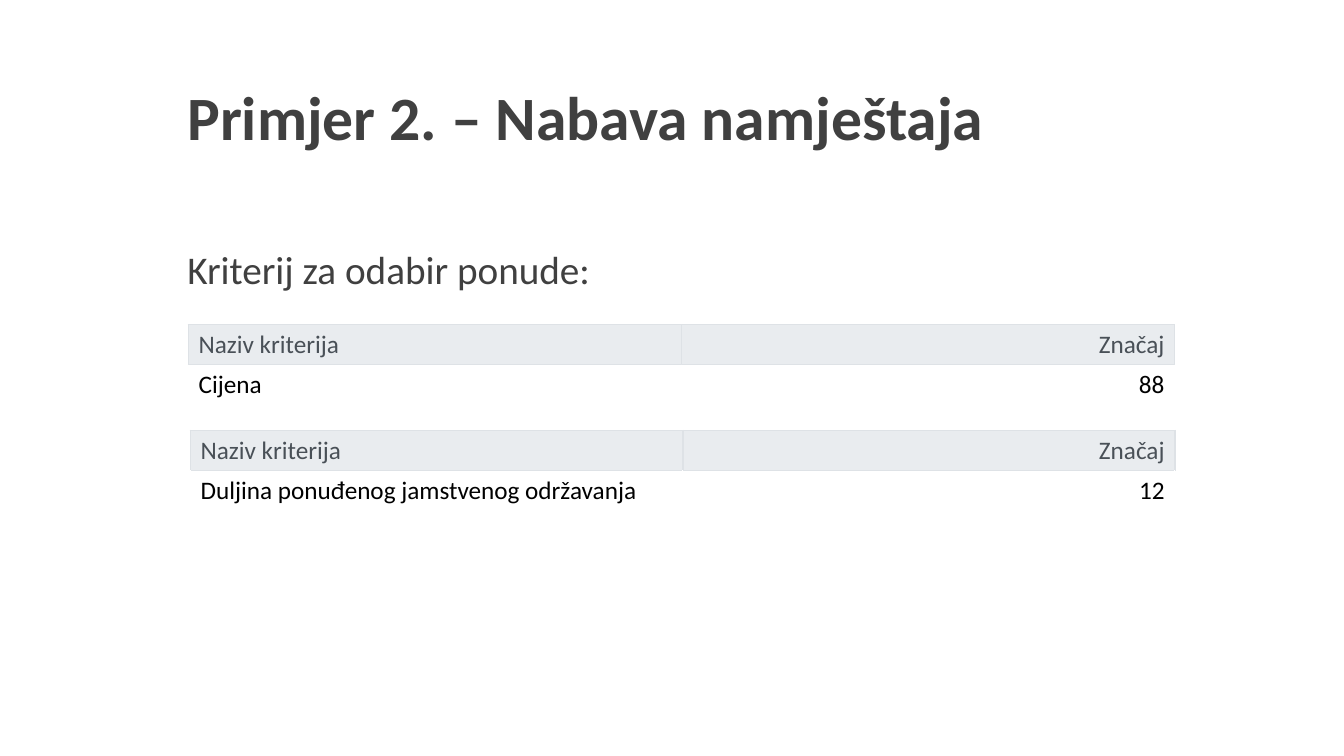
"""Builds a slide with the criteria for choosing a furniture offer."""
from lxml.etree import SubElement
from pptx import Presentation
from pptx.dml.color import RGBColor
from pptx.enum.text import MSO_ANCHOR as Anchor, PP_ALIGN as Align
from pptx.oxml.ns import qn
from pptx.util import Inches, Pt

TITLE = "Primjer 2. – Nabava namještaja"
INTRO = "Kriterij za odabir ponude:"
HEADER = ("Naziv kriterija", "Značaj")
CRITERIA = [
    (1.87, 3.22, ("Cijena", "88")),
    (1.89, 4.27, ("Duljina ponuđenog jamstvenog održavanja", "12")),
]
TABLE_RIGHT = 11.65
ROW_HEIGHT = 0.4
HEADER_EDGES = {"lnL": 1.5, "lnR": 1.5, "lnT": 0.75, "lnB": 0.75}
BODY_EDGES = {"lnT": 0.75}


def color(hex_code):
    return RGBColor.from_string(hex_code)


def style(paragraph, size, hex_code, bold=False):
    font = paragraph.font
    font.name, font.size, font.bold = "Calibri", Pt(size), bold
    font.color.rgb = color(hex_code)


def add_text(slide, text, top, height, size, anchor, bold=False):
    box = slide.shapes.add_textbox(Inches(1.76), Inches(top), Inches(10.43), Inches(height))
    frame = box.text_frame
    frame.word_wrap = True
    frame.vertical_anchor = anchor
    paragraph = frame.paragraphs[0]
    paragraph.text = text
    paragraph.line_spacing = 0.9
    style(paragraph, size, "404040", bold)


def set_edges(cell, edges):
    properties = cell._tc.get_or_add_tcPr()
    for edge, width in edges.items():
        line = SubElement(properties, qn(f"a:{edge}"), w=str(Pt(width)))
        fill = SubElement(line, qn("a:solidFill"))
        SubElement(fill, qn("a:srgbClr"), val="DEE2E6")


def add_criterion(slide, left, top, values):
    rows = [
        (HEADER, "495057", "E9ECEF", Anchor.BOTTOM, HEADER_EDGES),
        (values, "000000", "FFFFFF", Anchor.TOP, BODY_EDGES),
    ]
    table = slide.shapes.add_table(
        len(rows), len(HEADER), Inches(left), Inches(top),
        Inches(TABLE_RIGHT - left), Inches(ROW_HEIGHT * len(rows))).table
    for row, (texts, ink, fill, anchor, edges) in enumerate(rows):
        for column, text in enumerate(texts):
            cell = table.cell(row, column)
            cell.text = text
            cell.vertical_anchor = anchor
            set_edges(cell, edges)
            cell.fill.solid()
            cell.fill.fore_color.rgb = color(fill)
            paragraph = cell.text_frame.paragraphs[0]
            paragraph.alignment = Align.RIGHT if column else Align.LEFT
            style(paragraph, 18, ink)


def main():
    deck = Presentation()
    deck.slide_width, deck.slide_height = Inches(13.33), Inches(7.5)
    slide = deck.slides.add_slide(deck.slide_layouts[6])
    add_text(slide, TITLE, 0.65, 1.09, 44, Anchor.MIDDLE, bold=True)
    add_text(slide, INTRO, 2.44, 3.66, 28, Anchor.TOP)
    for left, top, values in CRITERIA:
        add_criterion(slide, left, top, values)
    deck.save("out.pptx")


if __name__ == "__main__":
    main()
